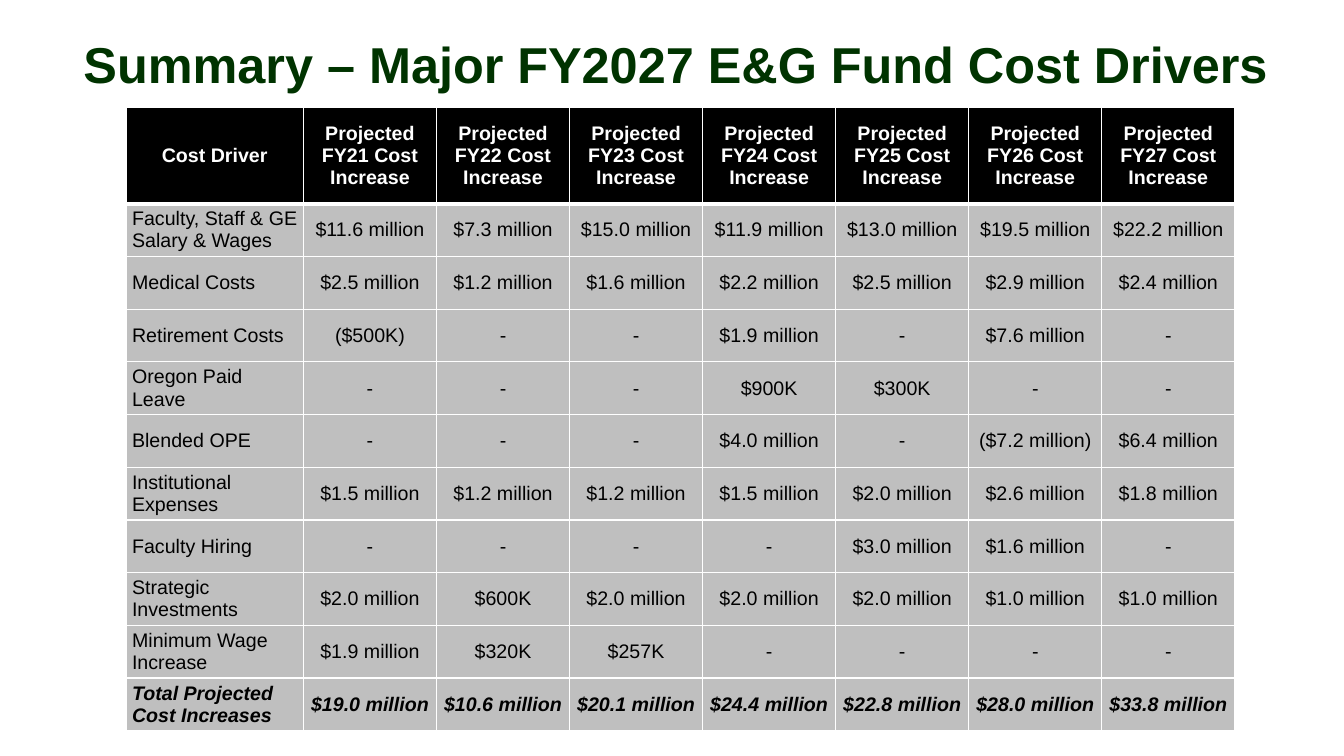
from dataclasses import dataclass

from lxml.etree import SubElement
from pptx import Presentation
from pptx.dml.color import RGBColor
from pptx.enum.text import MSO_ANCHOR as Anchor, PP_ALIGN as Align
from pptx.oxml.ns import qn
from pptx.util import Inches, Pt


@dataclass(frozen=True)
class Theme:
    font: str = "Arial"
    title_size: int = 36
    table_size: int = 14
    title: str = "003300"
    header_fill: str = "000000"
    header_text: str = "FFFFFF"
    body_fill: str = "BFBFBF"
    body_text: str = "000000"
    border: str = "FFFFFF"
    thin: int = 1
    thick: int = 3


@dataclass(frozen=True)
class Box:
    left: float
    top: float
    width: float
    height: float

    def emu(self):
        return [Inches(side) for side in (self.left, self.top, self.width, self.height)]


THEME = Theme()
SLIDE_WIDTH, SLIDE_HEIGHT = 13.33, 7.5
TITLE_BOX = Box(0.33, 0.17, 12.75, 0.91)
TABLE_BOX = Box(1.25, 1.07, 11, 6.18)
COLUMN_SHARES = [4] + [3] * 7
ROW_SHARES = [1.82] + [1] * 10

HEADER = ["Cost Driver"] + [f"Projected FY{year} Cost Increase" for year in range(21, 28)]
COST_DRIVERS = [
    ["Faculty, Staff & GE Salary & Wages", "$11.6 million", "$7.3 million", "$15.0 million",
     "$11.9 million", "$13.0 million", "$19.5 million", "$22.2 million"],
    ["Medical Costs", "$2.5 million", "$1.2 million", "$1.6 million",
     "$2.2 million", "$2.5 million", "$2.9 million", "$2.4 million"],
    ["Retirement Costs", "($500K)", "-", "-", "$1.9 million", "-", "$7.6 million", "-"],
    ["Oregon Paid Leave", "-", "-", "-", "$900K", "$300K", "-", "-"],
    ["Blended OPE", "-", "-", "-", "$4.0 million", "-", "($7.2 million)", "$6.4 million"],
    ["Institutional Expenses", "$1.5 million", "$1.2 million", "$1.2 million",
     "$1.5 million", "$2.0 million", "$2.6 million", "$1.8 million"],
    ["Faculty Hiring", "-", "-", "-", "-", "$3.0 million", "$1.6 million", "-"],
    ["Strategic Investments", "$2.0 million", "$600K", "$2.0 million",
     "$2.0 million", "$2.0 million", "$1.0 million", "$1.0 million"],
    ["Minimum Wage Increase", "$1.9 million", "$320K", "$257K", "-", "-", "-", "-"],
]
TOTALS = ["Total Projected Cost Increases", "$19.0 million", "$10.6 million", "$20.1 million",
          "$24.4 million", "$22.8 million", "$28.0 million", "$33.8 million"]


def write(frame, text, size, color, align, bold=False, italic=False):
    para = frame.paragraphs[0]
    para.alignment = align
    span = para.add_run()
    span.text = text
    font = span.font
    font.name, font.size = THEME.font, Pt(size)
    font.bold, font.italic = bold, italic
    font.color.rgb = RGBColor.from_string(color)


def add_borders(cell, top, bottom):
    properties = cell._tc.get_or_add_tcPr()
    widths = {"lnL": THEME.thin, "lnR": THEME.thin, "lnT": top, "lnB": bottom}
    for side, width in widths.items():
        line = SubElement(properties, qn(f"a:{side}"), w=str(Pt(width)))
        fill = SubElement(line, qn("a:solidFill"))
        SubElement(fill, qn("a:srgbClr"), val=THEME.border)


def add_title(page, box, text):
    title = page.shapes.title
    title.left, title.top, title.width, title.height = box.emu()
    frame = title.text_frame
    frame.word_wrap = True
    frame.vertical_anchor = Anchor.MIDDLE
    write(frame, text, THEME.title_size, THEME.title, Align.CENTER, bold=True)


def fill_cell(cell, text, row, column, last_row):
    header, total = row == 0, row == last_row
    cell.margin_left = cell.margin_right = Inches(0.06)
    cell.margin_top = cell.margin_bottom = Inches(0.03)
    cell.vertical_anchor = Anchor.MIDDLE
    add_borders(cell, THEME.thick if row == 1 else THEME.thin,
                THEME.thick if header else THEME.thin)
    cell.fill.solid()
    cell.fill.fore_color.rgb = RGBColor.from_string(
        THEME.header_fill if header else THEME.body_fill)
    align = Align.LEFT if column == 0 and not header else Align.CENTER
    write(cell.text_frame, text, THEME.table_size,
          THEME.header_text if header else THEME.body_text,
          align, bold=header or total, italic=total)


def add_cost_table(page, box, rows):
    table = page.shapes.add_table(len(rows), len(rows[0]), *box.emu()).table
    table.horz_banding = False
    for column, share in zip(table.columns, COLUMN_SHARES):
        column.width = Inches(box.width * share / sum(COLUMN_SHARES))
    for row, share in zip(table.rows, ROW_SHARES):
        row.height = Inches(box.height * share / sum(ROW_SHARES))
    for row, texts in enumerate(rows):
        for column, text in enumerate(texts):
            fill_cell(table.cell(row, column), text, row, column, len(rows) - 1)


def main():
    deck = Presentation()
    deck.slide_width, deck.slide_height = Inches(SLIDE_WIDTH), Inches(SLIDE_HEIGHT)
    page = deck.slides.add_slide(deck.slide_layouts.get_by_name("Title Only"))
    add_cost_table(page, TABLE_BOX, [HEADER, *COST_DRIVERS, TOTALS])
    add_title(page, TITLE_BOX, "Summary – Major FY2027 E&G Fund Cost Drivers")
    deck.save("out.pptx")


if __name__ == "__main__":
    main()
